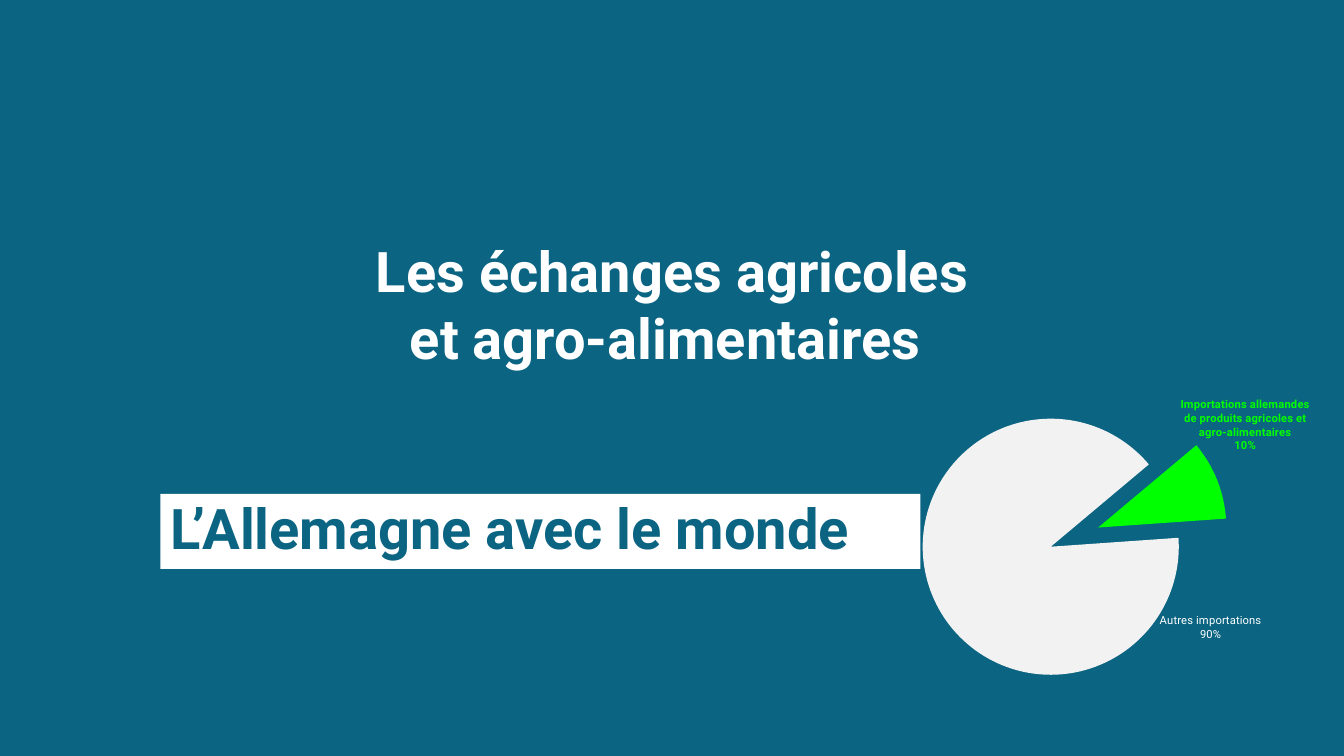
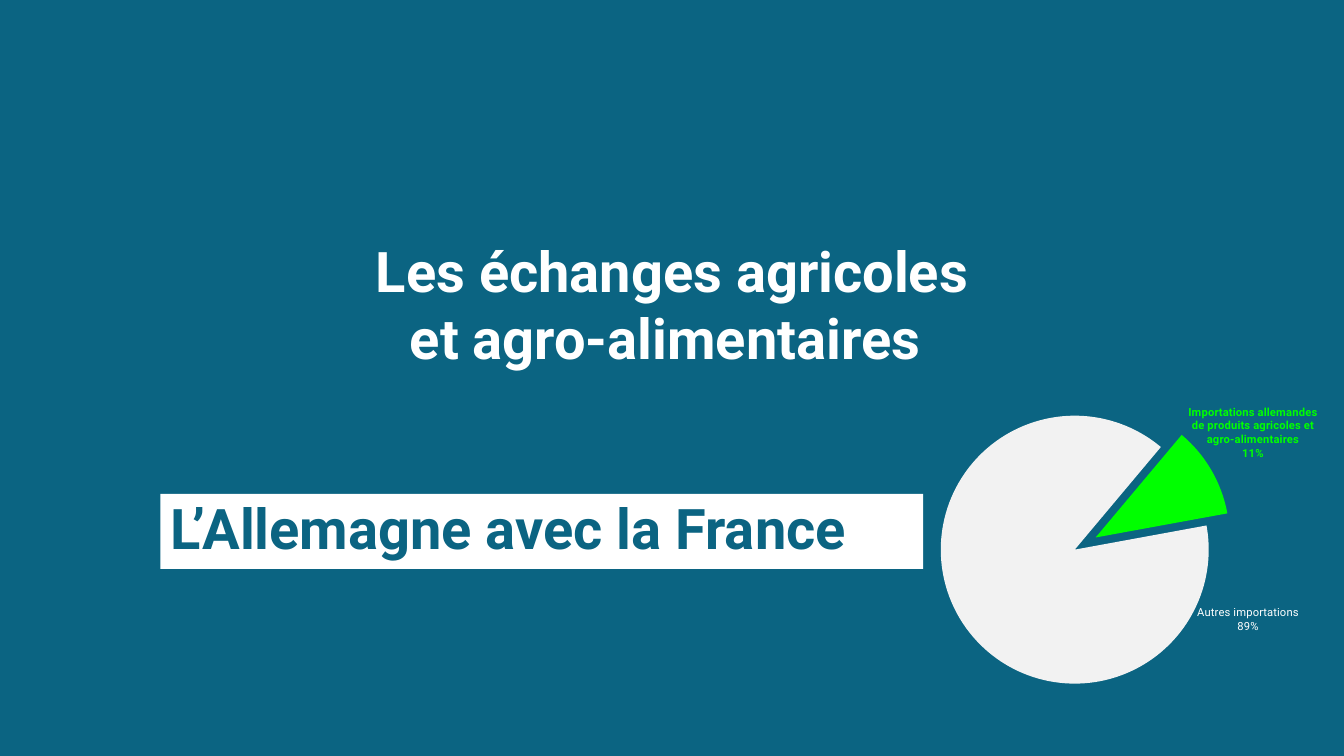
"""Build two section slides on German agricultural and food trade."""
import pptx
import pptx.chart.data
import pptx.dml.color
import pptx.enum.chart
import pptx.enum.text
import pptx.oxml
import pptx.oxml.ns
import pptx.util

Pt = pptx.util.Pt
RGBColor = pptx.dml.color.RGBColor
ALIGN = pptx.enum.text.PP_ALIGN
ANCHOR = pptx.enum.text.MSO_ANCHOR

BLUE = RGBColor(0x0B, 0x64, 0x82)
WHITE = RGBColor(0xFF, 0xFF, 0xFF)
GREEN = RGBColor(0x00, 0xFF, 0x00)
PALE_GREY = RGBColor(0xF2, 0xF2, 0xF2)
FONT = "Roboto"

TITLE_ONLY = 5
HEADING = "Les échanges agricoles et agro-alimentaires "
CATEGORIES = ("Produits agricoles et agro-alimentaires", "Autres")
LABELS = (
    "Importations allemandes de produits agricoles et agro-alimentaires",
    "Autres importations",
)
SLICE_COLOURS = (GREEN, PALE_GREY)
LABEL_STYLES = (
    {"size": Pt(8), "bold": True, "color": GREEN},
    {"size": Pt(8), "bold": False, "color": WHITE},
)
SECTIONS = (
    {
        "title": "L’Allemagne avec le monde",
        "band_width": 543,
        "shares": (0.1, 0.9),
        "chart_area": (528, 255, 499, 250),
        "plot_area": (0.26, 0.07, 0.44, 0.89),
        "start_angle": 50,
        "explosion": 20,
        "label_offsets": ((-0.06, -0.07), (0.48, 0.05)),
    },
    {
        "title": "L’Allemagne avec la France",
        "band_width": 545,
        "shares": (0.11, 0.89),
        "chart_area": (533.5, 257, 503.5, 245.5),
        "plot_area": (0.27, 0.11, 0.42, 0.85),
        "start_angle": 40,
        "explosion": 9,
        "label_offsets": ((-0.04, -0.02), (0.49, -0.04)),
    },
)


def apply_format(target, values):
    """Set each attribute of the target from a dict of format values."""
    for name, value in values.items():
        if name == "color":
            target.color.rgb = value
        else:
            setattr(target, name, value)


def write_text(frame, text, colour, alignment, anchor, spacing):
    """Write one large bold paragraph into a text frame."""
    apply_format(frame, {
        "word_wrap": True,
        "auto_size": pptx.enum.text.MSO_AUTO_SIZE.NONE,
        "vertical_anchor": anchor,
    })
    para = frame.paragraphs[0]
    apply_format(para, {"alignment": alignment, "line_spacing": spacing})
    span = para.add_run()
    span.text = text
    apply_format(span.font, {"name": FONT, "size": Pt(40), "bold": True, "color": colour})


def add_heading(page):
    """Add the heading that every section shares."""
    box = page.shapes.add_textbox(Pt(240), Pt(165.6), Pt(480), Pt(104.4))
    write_text(box.text_frame, HEADING, WHITE, ALIGN.CENTER, ANCHOR.TOP, 1.0)


def format_title_band(page, text, width):
    """Turn the title placeholder into the white section band."""
    band = page.shapes.title
    apply_format(band, {
        "left": Pt(114.5), "top": Pt(352.8), "width": Pt(width), "height": Pt(53.5),
    })
    band.fill.solid()
    band.fill.fore_color.rgb = WHITE
    write_text(band.text_frame, text, BLUE, ALIGN.LEFT, ANCHOR.MIDDLE, 0.9)


def make_layout(target, **values):
    """Return a manual chart layout for a plot area or a label."""
    settings = "".join(f'<c:{name} val="{value}"/>' for name, value in values.items())
    return pptx.oxml.parse_xml(
        f'<c:layout {pptx.oxml.ns.nsdecls("c")}><c:manualLayout>{target}{settings}'
        "</c:manualLayout></c:layout>"
    )


def place_plot(chart, area):
    """Give the plot area a fixed place inside the chart."""
    plot_area = chart.plots[0]._element.getparent()
    for layout in plot_area.findall(pptx.oxml.ns.qn("c:layout")):
        plot_area.remove(layout)
    left, top, width, height = area
    plot_area.insert(0, make_layout(
        '<c:layoutTarget val="inner"/>',
        xMode="edge", yMode="edge", x=left, y=top, w=width, h=height,
    ))


def set_rotation(chart, start_angle, explosion):
    """Turn the pie and pull its slices apart."""
    pie = chart.plots[0]._element
    for angle in pie.findall(pptx.oxml.ns.qn("c:firstSliceAng")):
        pie.remove(angle)
    namespace = pptx.oxml.ns.nsdecls("c")
    pie.append(pptx.oxml.parse_xml(f'<c:firstSliceAng {namespace} val="{start_angle}"/>'))
    series = pie.find(pptx.oxml.ns.qn("c:ser"))
    series.find(pptx.oxml.ns.qn("c:tx")).addnext(
        pptx.oxml.parse_xml(f'<c:explosion {namespace} val="{explosion}"/>')
    )


def label_slice(label, text, share, style, offset):
    """Write a slice's caption and share, moved from its usual place."""
    frame = label.text_frame
    frame.text = f"{text}\n{share:.0%}"
    for para in frame.paragraphs:
        for span in para.runs:
            apply_format(span.font, {"name": FONT, **style})
    label.position = pptx.enum.chart.XL_LABEL_POSITION.OUTSIDE_END
    element = label._dLbl
    element.insert(1, make_layout("", x=offset[0], y=offset[1]))


def add_pie(page, section):
    """Add the pie of import shares."""
    data = pptx.chart.data.CategoryChartData(number_format="0%")
    data.categories = CATEGORIES
    data.add_series("Series 1", section["shares"])
    chart = page.shapes.add_chart(
        pptx.enum.chart.XL_CHART_TYPE.PIE, *map(Pt, section["chart_area"]), data
    ).chart
    apply_format(chart, {"has_title": False, "has_legend": False})
    apply_format(chart.font, {"name": FONT, "size": Pt(8)})
    plot = chart.plots[0]
    plot.vary_by_categories = True
    series = plot.series[0]
    slices = zip(LABELS, section["shares"], SLICE_COLOURS, LABEL_STYLES, section["label_offsets"])
    for index, (text, share, colour, style, offset) in enumerate(slices):
        point = series.points[index]
        point.format.fill.solid()
        point.format.fill.fore_color.rgb = colour
        point.format.line.fill.background()
        label_slice(point.data_label, text, share, style, offset)
    apply_format(series.data_labels, {
        "show_value": True,
        "show_category_name": True,
        "number_format": "0%",
        "number_format_is_linked": False,
        "position": pptx.enum.chart.XL_LABEL_POSITION.OUTSIDE_END,
    })
    for leader in series._element.iter(pptx.oxml.ns.qn("c:showLeaderLines")):
        leader.set("val", "0")
    place_plot(chart, section["plot_area"])
    set_rotation(chart, section["start_angle"], section["explosion"])


def main():
    """Build and save the deck."""
    deck = pptx.Presentation()
    apply_format(deck, {"slide_width": Pt(960), "slide_height": Pt(540)})
    background = deck.slide_master.background.fill
    background.solid()
    background.fore_color.rgb = BLUE
    for section in SECTIONS:
        page = deck.slides.add_slide(deck.slide_layouts[TITLE_ONLY])
        add_heading(page)
        format_title_band(page, section["title"], section["band_width"])
        add_pie(page, section)
    deck.save("out.pptx")


if __name__ == "__main__":
    main()
